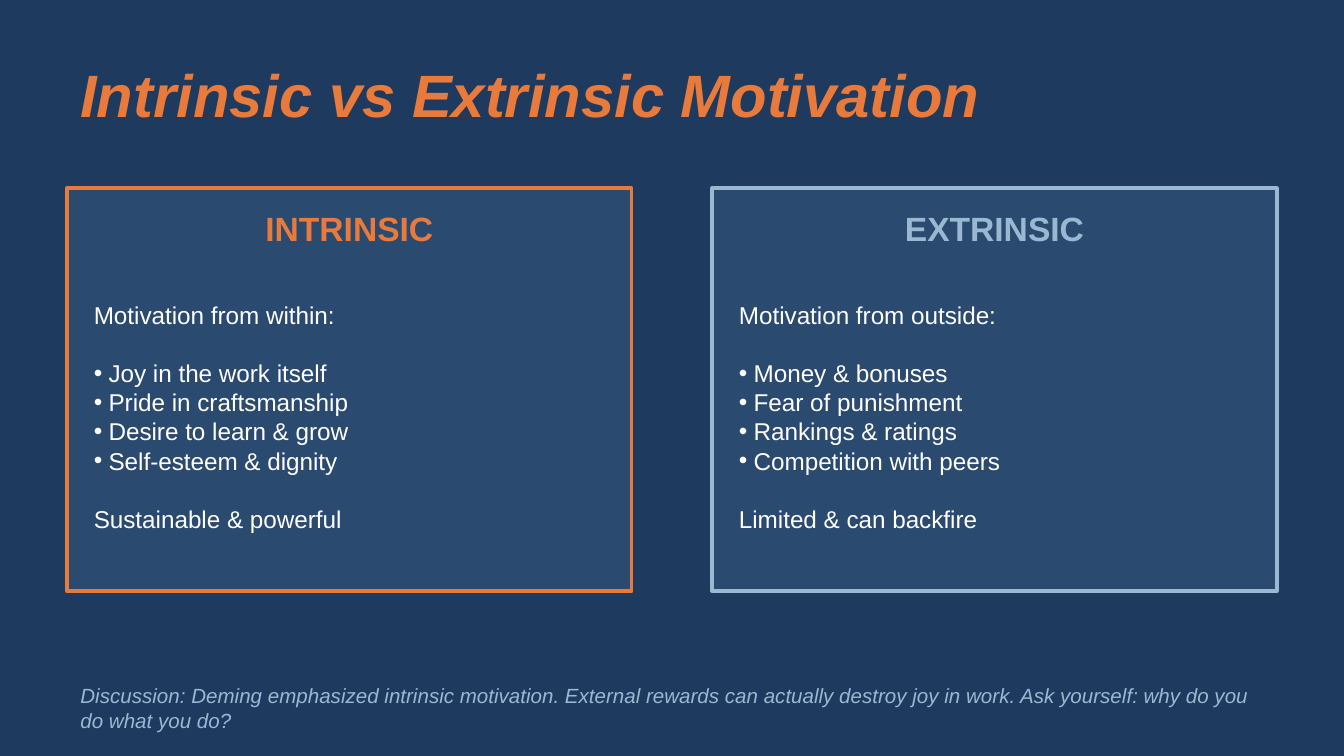
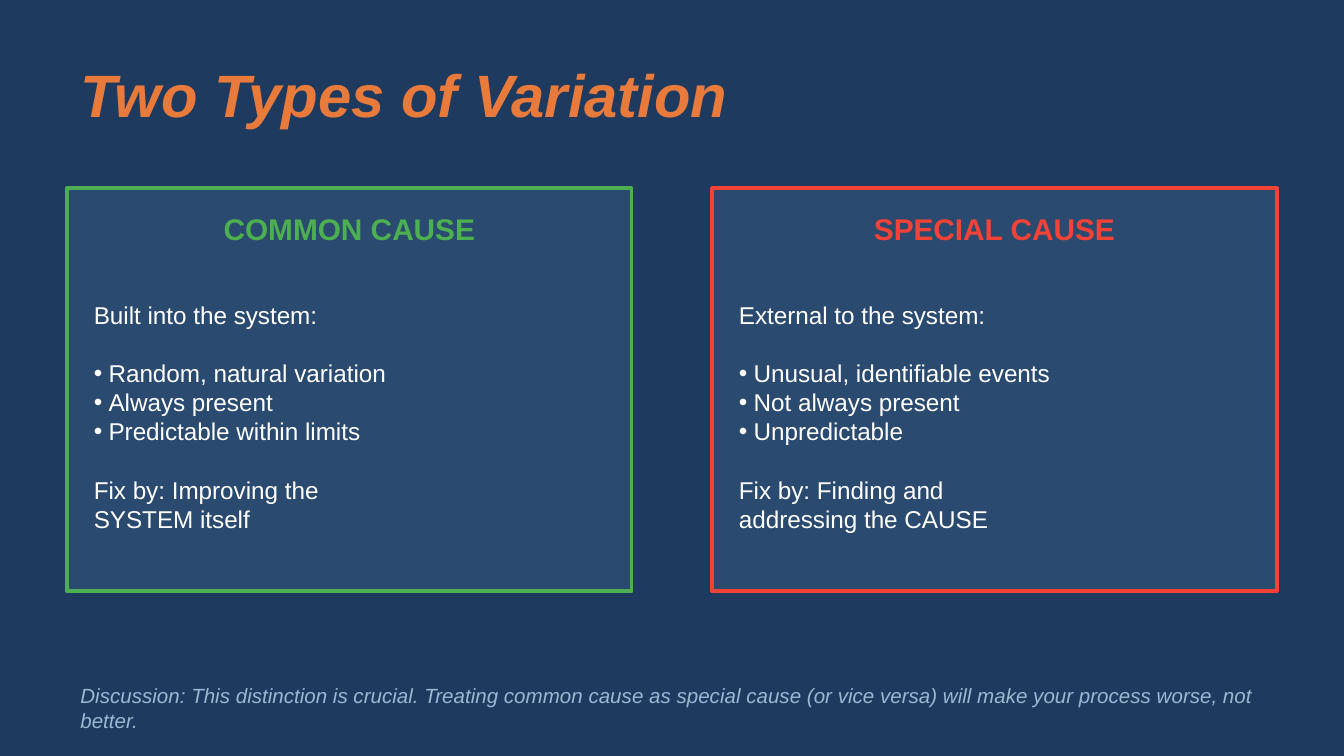
import pptx
import pptx.util
import pptx.dml.color
import pptx.enum.shapes
import pptx.enum.text
import pptx.oxml.ns
import lxml.etree

Inches = pptx.util.Inches
Pt = pptx.util.Pt
ALIGN = pptx.enum.text.PP_ALIGN
ANCHOR = pptx.enum.text.MSO_ANCHOR

FONT = "Arial"
NAVY, PANEL, ORANGE, MIST = "1E3A5F", "2A4A6F", "E87A3C", "9AB8D1"
WHITE, GREEN, RED = "FFFFFF", "4CAF50", "F44336"

SLIDE_WIDTH = 10
SLIDE_HEIGHT = SLIDE_WIDTH * 9 / 16
MARGIN = 0.5
CONTENT_WIDTH = SLIDE_WIDTH - 2 * MARGIN
CARD_WIDTH, CARD_HEIGHT, CARD_TOP = 4.2, 3, 1.4
CARD_GAP = CONTENT_WIDTH - 2 * CARD_WIDTH
BODY_INSET = 0.1
BULLET_INDENT = 0.11
GROUP_GAP = 15.65

COMPARISONS = [
    {
        "title": "Intrinsic vs Extrinsic Motivation",
        "heading_size": 18,
        "cards": [
            {
                "heading": "INTRINSIC",
                "accent": ORANGE,
                "intro": "Motivation from within:",
                "points": ["Joy in the work itself", "Pride in craftsmanship",
                           "Desire to learn & grow", "Self-esteem & dignity"],
                "verdict": ["Sustainable & powerful"],
            },
            {
                "heading": "EXTRINSIC",
                "accent": MIST,
                "intro": "Motivation from outside:",
                "points": ["Money & bonuses", "Fear of punishment",
                           "Rankings & ratings", "Competition with peers"],
                "verdict": ["Limited & can backfire"],
            },
        ],
        "discussion": "Discussion: Deming emphasized intrinsic motivation. "
                      "External rewards can actually destroy joy in work. "
                      "Ask yourself: why do you do what you do?",
    },
    {
        "title": "Two Types of Variation",
        "heading_size": 16,
        "cards": [
            {
                "heading": "COMMON CAUSE",
                "accent": GREEN,
                "intro": "Built into the system:",
                "points": ["Random, natural variation", "Always present",
                           "Predictable within limits"],
                "verdict": ["Fix by: Improving the", "SYSTEM itself"],
            },
            {
                "heading": "SPECIAL CAUSE",
                "accent": RED,
                "intro": "External to the system:",
                "points": ["Unusual, identifiable events", "Not always present",
                           "Unpredictable"],
                "verdict": ["Fix by: Finding and", "addressing the CAUSE"],
            },
        ],
        "discussion": "Discussion: This distinction is crucial. Treating common cause "
                      "as special cause (or vice versa) will make your process worse, "
                      "not better.",
    },
]


def color(hex_value):
    return pptx.dml.color.RGBColor.from_string(hex_value)


def add_frame(slide, left, top, width, height, anchor=ANCHOR.MIDDLE):
    box = slide.shapes.add_textbox(Inches(left), Inches(top), Inches(width), Inches(height))
    frame = box.text_frame
    frame.word_wrap = True
    frame.vertical_anchor = anchor
    return frame


def add_run(paragraph, text, size, hex_value, bold=False, italic=False):
    run = paragraph.add_run()
    run.text = text
    run.font.name = FONT
    run.font.size = Pt(size)
    run.font.color.rgb = color(hex_value)
    run.font.bold = bold
    run.font.italic = italic


def add_bullet(paragraph):
    properties = paragraph._p.get_or_add_pPr()
    properties.set("marL", str(Inches(BULLET_INDENT)))
    properties.set("indent", str(-Inches(BULLET_INDENT)))
    for tag, attribute, value in [("a:buFont", "typeface", FONT), ("a:buChar", "char", "•")]:
        lxml.etree.SubElement(properties, pptx.oxml.ns.qn(tag)).set(attribute, value)


def add_body(slide, left, card):
    frame = add_frame(slide, left + BODY_INSET, 2, 4, 2.2)
    groups = [[card["intro"]], card["points"], card["verdict"]]
    for group_index, lines in enumerate(groups):
        for line_index, line in enumerate(lines):
            first = group_index == line_index == 0
            paragraph = frame.paragraphs[0] if first else frame.add_paragraph()
            if lines is card["points"]:
                add_bullet(paragraph)
            if group_index > 0 and line_index == 0:
                paragraph.space_before = Pt(GROUP_GAP)
            add_run(paragraph, line, 13, WHITE)


def add_card(slide, left, card, heading_size):
    panel = slide.shapes.add_shape(
        pptx.enum.shapes.MSO_SHAPE.RECTANGLE,
        Inches(left), Inches(CARD_TOP), Inches(CARD_WIDTH), Inches(CARD_HEIGHT))
    panel.shadow.inherit = False
    panel.fill.solid()
    panel.fill.fore_color.rgb = color(PANEL)
    panel.line.color.rgb = color(card["accent"])
    panel.line.width = Pt(2)

    heading = add_frame(slide, left, CARD_TOP + 0.1, CARD_WIDTH, 0.4).paragraphs[0]
    heading.alignment = ALIGN.CENTER
    add_run(heading, card["heading"], heading_size, card["accent"], bold=True)
    add_body(slide, left, card)


def add_comparison(deck, comparison):
    slide = deck.slides.add_slide(deck.slide_layouts[6])
    slide.background.fill.solid()
    slide.background.fill.fore_color.rgb = color(NAVY)

    title = add_frame(slide, MARGIN, 0.3, CONTENT_WIDTH, 0.8).paragraphs[0]
    add_run(title, comparison["title"], 32, ORANGE, bold=True, italic=True)

    for index, card in enumerate(comparison["cards"]):
        left = MARGIN + index * (CARD_WIDTH + CARD_GAP)
        add_card(slide, left, card, comparison["heading_size"])

    discussion = add_frame(slide, MARGIN, 4.8, CONTENT_WIDTH, 0.7, ANCHOR.BOTTOM).paragraphs[0]
    add_run(discussion, comparison["discussion"], 11, MIST, italic=True)


def main():
    deck = pptx.Presentation()
    deck.slide_width = Inches(SLIDE_WIDTH)
    deck.slide_height = Inches(SLIDE_HEIGHT)
    for comparison in COMPARISONS:
        add_comparison(deck, comparison)
    deck.save("out.pptx")


if __name__ == "__main__":
    main()
